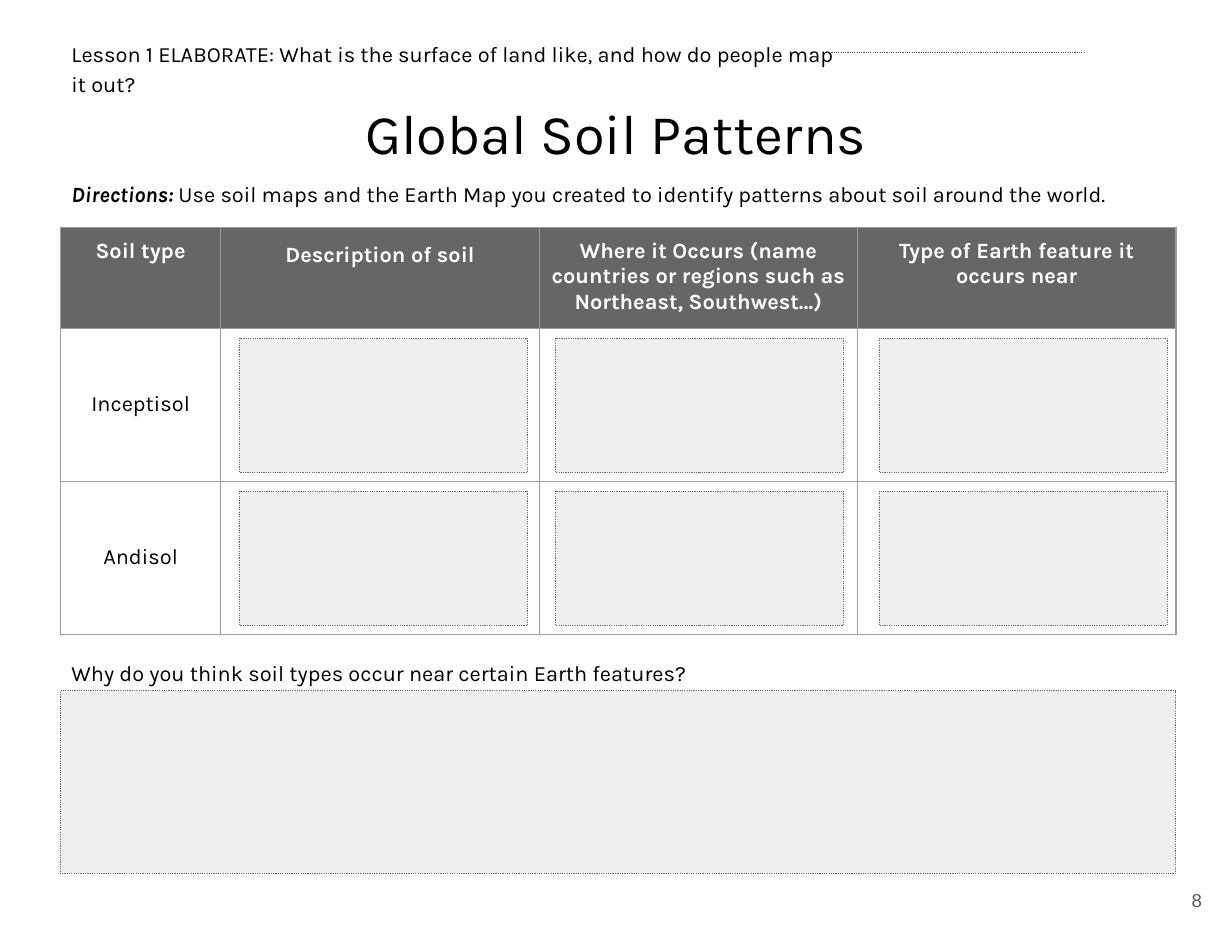
"""Build the Global Soil Patterns worksheet slide."""
import pptx
import pptx.dml.color
import pptx.enum.dml
import pptx.enum.shapes
import pptx.enum.text
import pptx.oxml
import pptx.oxml.ns
import pptx.util
from lxml import etree

Cm, Pt = pptx.util.Cm, pptx.util.Pt
RGBColor = pptx.dml.color.RGBColor
ALIGN = pptx.enum.text.PP_ALIGN
ANCHOR = pptx.enum.text.MSO_ANCHOR

BLACK = RGBColor(0x00, 0x00, 0x00)
WHITE = RGBColor(0xFF, 0xFF, 0xFF)
HEADER_GRAY = RGBColor(0x66, 0x66, 0x66)
RULE_GRAY = RGBColor(0x59, 0x59, 0x59)
ANSWER_GRAY = RGBColor(0xEF, 0xEF, 0xEF)
GRID_GRAY = RGBColor(0x9E, 0x9E, 0x9E)

LESSON = "Lesson 1 ELABORATE: What is the surface of land like, and how do people map it out?"
TITLE = "Global Soil Patterns"
DIRECTIONS = [
    ("Directions: ", True),
    ("Use soil maps and the Earth Map you created to identify patterns about soil around the world.", False),
]
HEADINGS = [
    "Soil type",
    "Description of soil",
    "Where it Occurs (name countries or regions such as Northeast, Southwest…)",
    "Type of Earth feature it occurs near",
]
SOILS = ["Inceptisol", "Andisol"]
QUESTION = "Why do you think soil types occur near certain Earth features?"
PAGE_NUMBER = "8"

LEFT, WIDTH = 1.37, 25.3
TABLE_TOP, HEADER_HEIGHT, SOIL_HEIGHT = 5.16, 2.24, 3.47
SOIL_WIDTH = 3.64
ANSWER_WIDTH = (WIDTH - SOIL_WIDTH) / (len(HEADINGS) - 1)
ANSWER_LEFTS = [5.44, 12.6, 19.94]
ANSWER_TOP = 7.67
ANSWER_SIZE = (6.53, 3.05)


def set_font(paragraph, size=14, color=BLACK, bold=False, name="Karla"):
    paragraph.font.name = name
    paragraph.font.size = Pt(size)
    paragraph.font.color.rgb = color
    paragraph.font.bold = bold


def set_margins(target, inset):
    target.margin_left = target.margin_right = Cm(inset)
    target.margin_top = target.margin_bottom = Cm(inset)


def add_text(slide, place, runs, size=14, color=BLACK, name="Karla", align=ALIGN.LEFT,
             anchor=ANCHOR.TOP, spacing=1.15, inset=0.25):
    frame = slide.shapes.add_textbox(*map(Cm, place)).text_frame
    frame.word_wrap = True
    frame.vertical_anchor = anchor
    set_margins(frame, inset)
    paragraph = frame.paragraphs[0]
    paragraph.alignment = align
    paragraph.line_spacing = spacing
    set_font(paragraph, size, color, name=name)
    for text, emphasized in runs:
        run = paragraph.add_run()
        run.text = text
        if emphasized:
            run.font.bold = run.font.italic = True


def set_dotted(line, color):
    line.color.rgb = color
    line.width = Pt(0.75)
    line.dash_style = pptx.enum.dml.MSO_LINE.ROUND_DOT


def add_answer_box(slide, place):
    box = slide.shapes.add_shape(pptx.enum.shapes.MSO_SHAPE.RECTANGLE, *map(Cm, place))
    box.shadow.inherit = False
    box.fill.solid()
    box.fill.fore_color.rgb = ANSWER_GRAY
    set_dotted(box.line, HEADER_GRAY)


def add_borders(cell):
    properties = cell._tc.get_or_add_tcPr()
    for side in ("lnL", "lnR", "lnT", "lnB"):
        properties.append(pptx.oxml.parse_xml(
            f'<a:{side} {pptx.oxml.ns.nsdecls("a")} w="{Pt(0.75)}"><a:solidFill>'
            f'<a:srgbClr val="{GRID_GRAY}"/></a:solidFill></a:{side}>'))


def add_soil_table(slide):
    rows = [HEADINGS] + [[soil] + [""] * (len(HEADINGS) - 1) for soil in SOILS]
    heights = [HEADER_HEIGHT] + [SOIL_HEIGHT] * len(SOILS)
    widths = [SOIL_WIDTH] + [ANSWER_WIDTH] * (len(HEADINGS) - 1)
    table = slide.shapes.add_table(len(rows), len(widths), Cm(LEFT), Cm(TABLE_TOP),
                                   Cm(WIDTH), Cm(sum(heights))).table
    for column, width in zip(table.columns, widths):
        column.width = Cm(width)
    for r, (texts, height) in enumerate(zip(rows, heights)):
        table.rows[r].height = Cm(height)
        for c, text in enumerate(texts):
            cell = table.cell(r, c)
            add_borders(cell)
            set_margins(cell, 0.25)
            cell.text = text
            paragraph = cell.text_frame.paragraphs[0]
            paragraph.alignment = ALIGN.CENTER
            set_font(paragraph, color=BLACK if r else WHITE, bold=r == 0)
            if r:
                cell.fill.background()
                cell.vertical_anchor = ANCHOR.MIDDLE
            else:
                cell.fill.solid()
                cell.fill.fore_color.rgb = HEADER_GRAY
    table.cell(0, 1).text_frame.paragraphs[0].line_spacing = 1.15


def main():
    deck = pptx.Presentation()
    deck.slide_width, deck.slide_height = Cm(27.94), Cm(21.59)
    slide = deck.slides.add_slide(deck.slide_layouts[6])

    add_text(slide, (0, 1.75, 27.94, 1.65), [(TITLE, False)], size=36, align=ALIGN.CENTER)
    add_text(slide, (LEFT, 0.58, 18.16, 1.09), [(LESSON, False)])
    name_line = slide.shapes.add_connector(pptx.enum.shapes.MSO_CONNECTOR.STRAIGHT,
                                           Cm(18.75), Cm(1.19), Cm(24.59), Cm(1.19))
    set_dotted(name_line.line, RULE_GRAY)
    etree.SubElement(name_line._element.spPr, pptx.oxml.ns.qn("a:effectLst"))

    add_soil_table(slide)
    add_text(slide, (LEFT, 14.63, 23.22, 1.12), [(QUESTION, False)])
    add_text(slide, (LEFT, 3.86, 25.07, 1.12), DIRECTIONS, spacing=1.0)

    add_answer_box(slide, (LEFT, 15.67, WIDTH, 4.14))
    for left in ANSWER_LEFTS:
        for row in range(len(SOILS)):
            add_answer_box(slide, (left, ANSWER_TOP + row * SOIL_HEIGHT, *ANSWER_SIZE))

    add_text(slide, (25.88, 19.58, 1.68, 1.65), [(PAGE_NUMBER, False)], size=12, color=RULE_GRAY,
             name="Arial", align=ALIGN.RIGHT, anchor=ANCHOR.MIDDLE, spacing=1.0, inset=0.3)
    deck.save("out.pptx")


if __name__ == "__main__":
    main()
